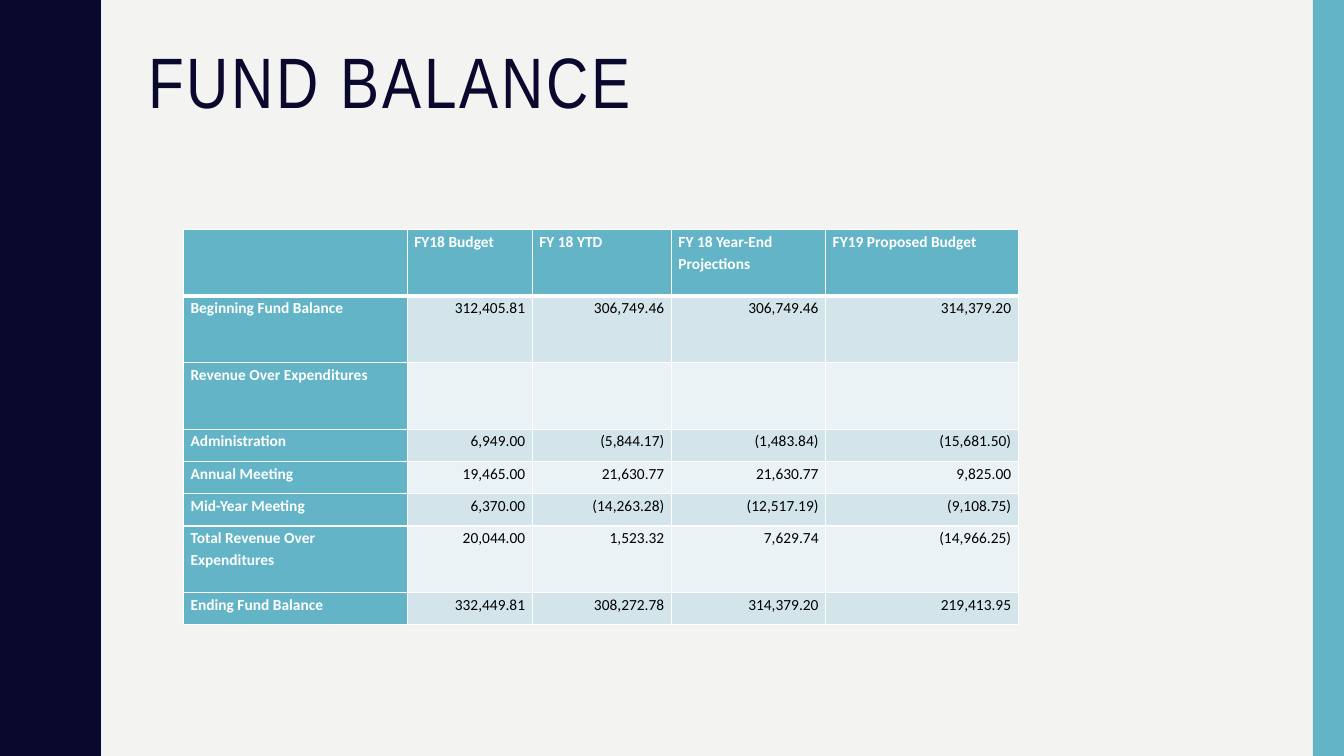
from lxml import etree
from pptx import Presentation, util as u
from pptx.dml.color import RGBColor
from pptx.enum import shapes, text
from pptx.oxml.ns import qn

NAVY, TEAL, WHITE, BLACK = "0B082E", "62B4C6", "FFFFFF", "000000"
PAPER, BAND_DARK, BAND_LIGHT = "F3F3F2", "D3E5EA", "EAF2F5"


def color(value):
    return RGBColor.from_string(value)


class SlideBuilder:
    def __init__(self, slide):
        self.slide = slide
        self.title_font, self.body_font = "Arial Narrow", "Calibri"

    def background(self, fill):
        self.slide.background.fill.solid()
        self.slide.background.fill.fore_color.rgb = color(fill)

    def paint(self, shape, fill):
        shape.shadow.inherit = False
        shape.fill.solid()
        shape.fill.fore_color.rgb = color(fill)
        shape.line.fill.background()

    def rectangle(self, left, top, width, height, fill):
        box = self.slide.shapes.add_shape(
            shapes.MSO_SHAPE.RECTANGLE, *map(u.Inches, (left, top, width, height)))
        self.paint(box, fill)

    def outline(self, points, fill):
        builder = self.slide.shapes.build_freeform(*points[0], scale=u.Inches(1))
        builder.add_line_segments(points[1:], close=True)
        self.paint(builder.convert_to_shape(), fill)

    def style(self, span, font, size, ink, bold=False):
        span.font.name, span.font.size, span.font.bold = font, u.Pt(size), bold
        span.font.color.rgb = color(ink)

    def title(self, words, left, top, width, height):
        box = self.slide.shapes.add_textbox(*map(u.Inches, (left, top, width, height)))
        frame = box.text_frame
        frame.text = words
        frame.word_wrap = True
        frame.vertical_anchor = text.MSO_ANCHOR.TOP
        para = frame.paragraphs[0]
        para.line_spacing = 0.9
        span = para.runs[0]
        self.style(span, self.title_font, 51, NAVY)
        span.font._element.set("spc", "200")

    def borders(self, cell, widths):
        properties = cell._tc.get_or_add_tcPr()
        for side, width in widths.items():
            line = etree.SubElement(properties, qn(f"a:ln{side}"), w=str(u.Pt(width)))
            fill = etree.SubElement(line, qn("a:solidFill"))
            etree.SubElement(fill, qn("a:srgbClr"), val=WHITE)

    def cell(self, cell, words, fill, label, widths):
        self.borders(cell, widths)
        cell.fill.solid()
        cell.fill.fore_color.rgb = color(fill)
        cell.margin_left = cell.margin_right = u.Inches(0.07)
        cell.margin_top = cell.margin_bottom = 0
        para = cell.text_frame.paragraphs[0]
        para.font.size = u.Pt(11)
        para.line_spacing = 1.15
        if words:
            para.text = words
            para.alignment = text.PP_ALIGN.LEFT if label else text.PP_ALIGN.RIGHT
            self.style(para.runs[0], self.body_font, 11, WHITE if label else BLACK, label)

    def table(self, rows, left, top, widths, heights):
        frame = self.slide.shapes.add_table(
            len(rows), len(widths),
            *map(u.Inches, (left, top, sum(widths), sum(heights))))
        table = frame.table
        for column, width in zip(table.columns, widths):
            column.width = u.Inches(width)
        for r, (row, height) in enumerate(zip(rows, heights)):
            table.rows[r].height = u.Inches(height)
            lines = {"L": 1, "R": 1, "T": 3 if r == 1 else 1, "B": 3 if r == 0 else 1}
            band = BAND_DARK if r % 2 else BAND_LIGHT
            for c, words in enumerate(row):
                label = r == 0 or c == 0
                self.cell(table.cell(r, c), words, TEAL if label else band, label, lines)


def wave_edge(period, count):
    """Points down the wavy edge: a half wave, mirrored, then repeated."""
    half = [(0.78, 0), (0.78, 0.07), (0.79, 0.14), (0.8, 0.2), (0.81, 0.25),
            (0.83, 0.29), (0.85, 0.33), (0.87, 0.38), (0.89, 0.42), (0.91, 0.46),
            (0.93, 0.5), (0.95, 0.55), (0.96, 0.61), (0.97, 0.68), (0.97, 0.75)]
    wave = half + [(x, period - y) for x, y in reversed(half[:-1])]
    return [(x, y + i * period) for i in range(count) for x, y in wave]


def main():
    deck = Presentation()
    deck.slide_width, deck.slide_height = u.Inches(13.33), u.Inches(7.5)
    page = SlideBuilder(deck.slides.add_slide(deck.slide_layouts[6]))

    # Background and side bands
    page.background(PAPER)
    page.outline([(0, 0), *wave_edge(1.5, 5), (0, 7.5)], NAVY)
    page.rectangle(13.02, 0, 0.31, 7.5, TEAL)

    # Title
    page.title("FUND BALANCE", 1.37, 0.42, 11.13, 1.63)

    # Fund balance table
    rows = [
        ["", "FY18 Budget", "FY 18 YTD", "FY 18 Year-End Projections", "FY19 Proposed Budget"],
        ["Beginning Fund Balance", "312,405.81", "306,749.46", "306,749.46", "314,379.20"],
        ["Revenue Over Expenditures", "", "", "", ""],
        ["Administration", "6,949.00", "(5,844.17)", "(1,483.84)", "(15,681.50)"],
        ["Annual Meeting", "19,465.00", "21,630.77", "21,630.77", "9,825.00"],
        ["Mid-Year Meeting", "6,370.00", "(14,263.28)", "(12,517.19)", "(9,108.75)"],
        ["Total Revenue Over Expenditures", "20,044.00", "1,523.32", "7,629.74", "(14,966.25)"],
        ["Ending Fund Balance", "332,449.81", "308,272.78", "314,379.20", "219,413.95"],
    ]
    tall, short = 0.66, 0.32
    page.table(rows, 1.82, 2.28, [2.22, 1.24, 1.38, 1.53, 1.91],
               [tall] * 3 + [short] * 3 + [tall, short])

    deck.save("out.pptx")


if __name__ == "__main__":
    main()
